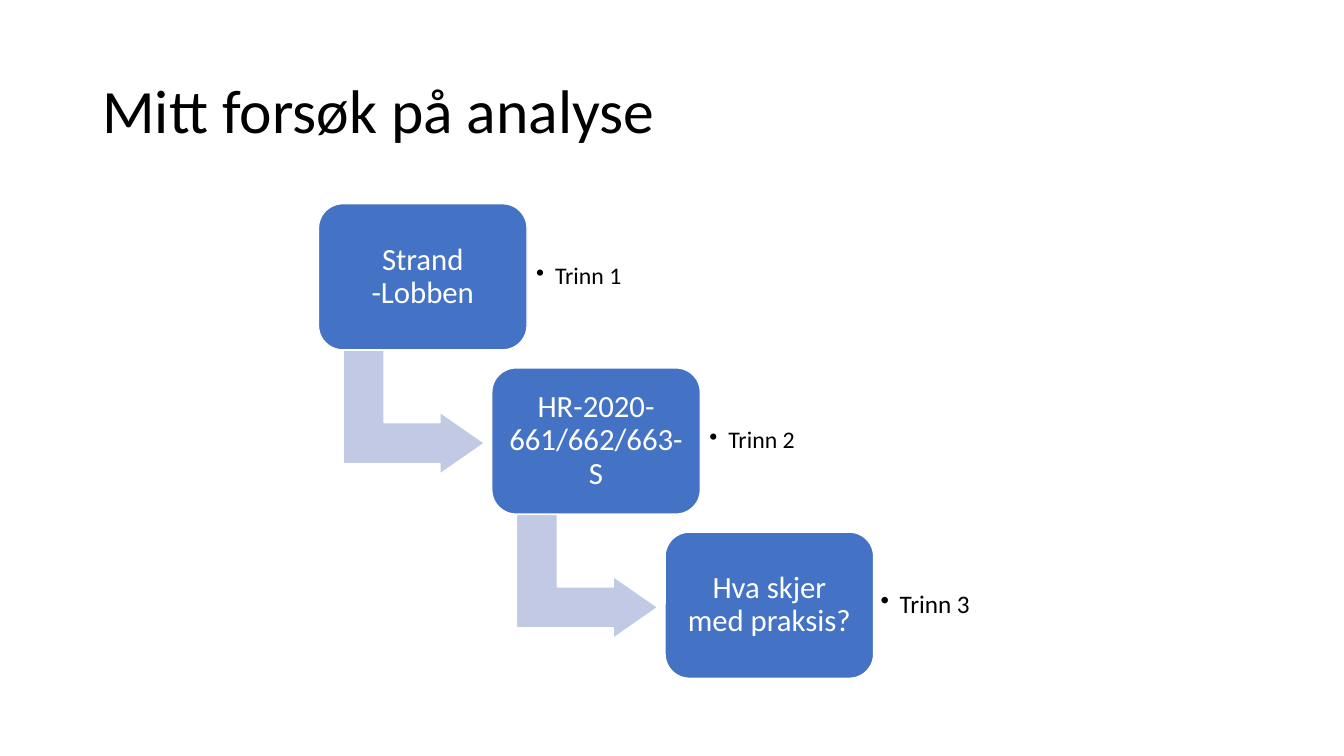
from lxml import etree
from pptx import Presentation
from pptx.dml.color import RGBColor
from pptx.enum.shapes import MSO_SHAPE
from pptx.enum.text import MSO_ANCHOR, PP_ALIGN
from pptx.oxml.ns import qn
from pptx.util import Pt

ROUNDED = MSO_SHAPE.ROUNDED_RECTANGLE
BENT_ARROW = MSO_SHAPE.BENT_UP_ARROW
MIDDLE = MSO_ANCHOR.MIDDLE
LEFT, CENTER = PP_ALIGN.LEFT, PP_ALIGN.CENTER

BLACK = RGBColor(0x00, 0x00, 0x00)
WHITE = RGBColor(0xFF, 0xFF, 0xFF)
BLUE = RGBColor(0x44, 0x72, 0xC4)
PALE_BLUE = RGBColor(0xC1, 0xC9, 0xE4)


def write(holder, text, size, color, align, inset_x, inset_y):
    frame = holder.text_frame
    frame.word_wrap = True
    frame.vertical_anchor = MIDDLE
    frame.margin_left = frame.margin_right = Pt(inset_x)
    frame.margin_top = frame.margin_bottom = Pt(inset_y)
    paragraph = frame.paragraphs[0]
    paragraph.text = text
    paragraph.alignment = align
    paragraph.line_spacing = 0.9
    paragraph.font.size = Pt(size)
    paragraph.font.name = "Calibri"
    paragraph.font.color.rgb = color
    return paragraph


def add_block(kind, left, top, width, height, fill):
    block = slide.shapes.add_shape(kind, Pt(left), Pt(top), Pt(width), Pt(height))
    block.shadow.inherit = False
    block.fill.solid()
    block.fill.fore_color.rgb = fill
    block.line.color.rgb = WHITE
    block.line.width = Pt(1)
    return block


prs = Presentation()
prs.slide_width, prs.slide_height = Pt(960), Pt(540)
slide = prs.slides.add_slide(prs.slide_layouts[6])

title = slide.shapes.add_textbox(Pt(66), Pt(28.8), Pt(828), Pt(104.4))
write(title, "Mitt forsøk på analyse", 44, BLACK, LEFT, 7.2, 3.6)

BOX_WIDTH, BOX_HEIGHT = 149, 104.4
steps = [
    ("Strand -Lobben", "Trinn 1", 17, 6.5),
    ("HR-2020-661/662/663-S", "Trinn 2", 17, 6.5),
    ("Hva skjer med praksis?", "Trinn 3", 18, 5),
]
for i, (topic, label, label_size, label_inset) in enumerate(steps):
    left, top = 227.5 + 123.8 * i, 145.5 + 117.3 * i

    if i < len(steps) - 1:
        arrow = add_block(BENT_ARROW, left + 23.8, top + 98.4, 88.6, 101, PALE_BLUE)
        arrow.rotation = 90
        for n, ratio in enumerate((0.33, 0.25, 0.36)):
            arrow.adjustments[n] = ratio

    box = add_block(ROUNDED, left, top, BOX_WIDTH, BOX_HEIGHT, BLUE)
    write(box, topic, 22, WHITE, CENTER, 6.5, 6.5)

    step_label = slide.shapes.add_textbox(
        Pt(left + BOX_WIDTH), Pt(top + 10), Pt(108.7), Pt(84.4))
    bullet_line = write(step_label, label, label_size, BLACK, LEFT, label_inset, label_inset)
    properties = bullet_line._p.get_or_add_pPr()
    properties.set("marL", str(Pt(13.5)))
    properties.set("indent", str(Pt(-13.5)))
    bullet = etree.Element(qn("a:buChar"), char="•")
    properties.find(qn("a:lnSpc")).addnext(bullet)

prs.save("out.pptx")
